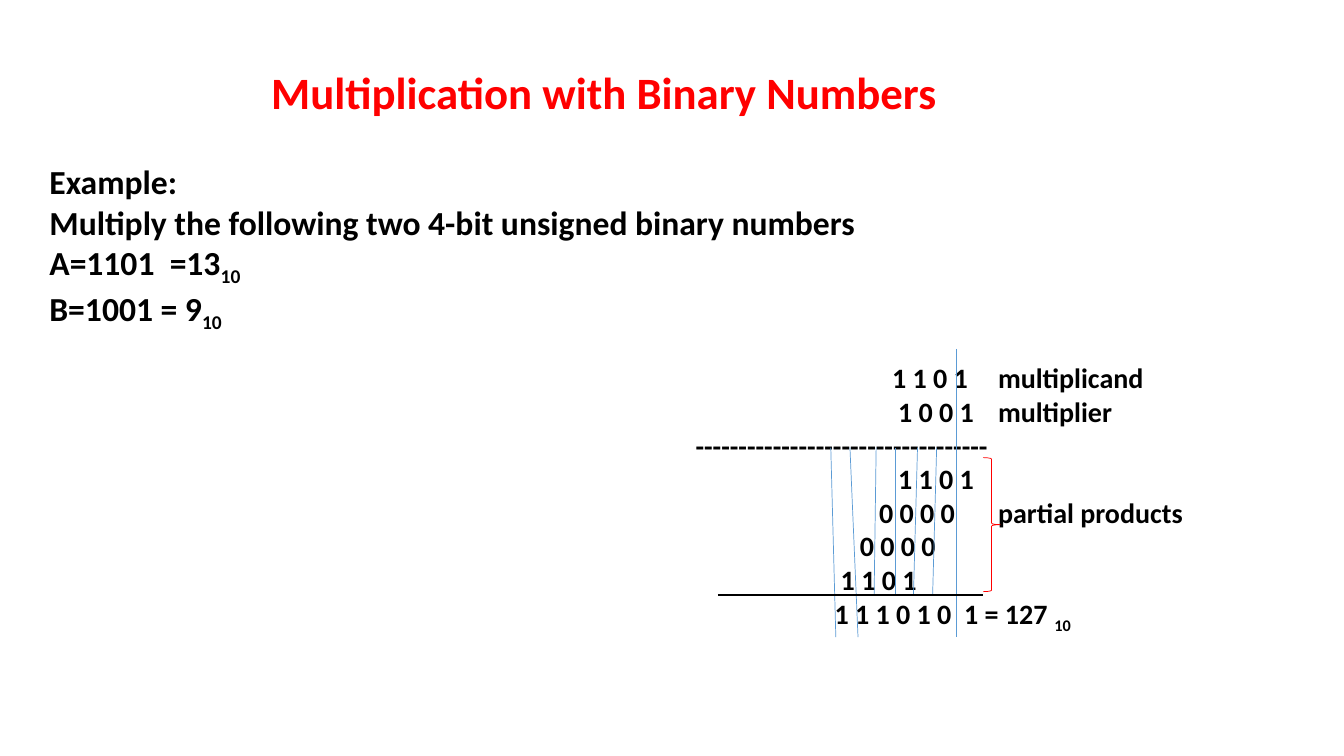
from lxml.etree import SubElement
from pptx import Presentation
from pptx.dml.color import RGBColor
from pptx.enum.shapes import MSO_CONNECTOR as CONN, MSO_SHAPE as SHAPE
from pptx.enum.text import MSO_ANCHOR as ANCHOR, MSO_AUTO_SIZE as AUTO, PP_ALIGN as ALIGN
from pptx.oxml.ns import qn
from pptx.util import Inches, Pt

RED = RGBColor(0xFF, 0x00, 0x00)
BLACK = RGBColor(0x00, 0x00, 0x00)
BLUE = RGBColor(0x5B, 0x9B, 0xD5)

# Start of each row inside the text box, its text, its subscript
WORKING = [
    (1.95, "1 1 0 1\tmultiplicand", ""),
    (2.01, "1 0 0 1\tmultiplier", ""),
    (0, "-" * 34, ""),
    (2.01, "1 1 0 1", ""),
    (1.82, "0 0 0 0\tpartial products", ""),
    (1.63, "0 0 0 0", ""),
    (1.44, "1 1 0 1", ""),
    (1.38, "1 1 1 0 1 0  1 = 127 ", "10"),
]
LABEL_TABS = {"multiplicand": 2.95, "multiplier": 2.95, "partial products": 3.07}
# Top x, bottom x and bottom y of each column guide, from the box corner
GUIDES = [(1.44, 1.49, 2.79), (1.63, 1.71, 2.79), (1.89, 1.87, 2.37),
          (2.08, 2.08, 2.37), (2.3, 2.26, 2.37), (2.49, 2.45, 2.37)]


def place(sp, left, top, width, height):
    sp.left, sp.top = Inches(left), Inches(top)
    sp.width, sp.height = Inches(width), Inches(height)


def setup_frame(tf):
    tf.word_wrap = True
    tf.auto_size = AUTO.NONE
    tf.vertical_anchor = ANCHOR.TOP


def style(p, size, color=BLACK, indent=0):
    """Bold, left-aligned text without bullet; indent moves the first line."""
    p.alignment = ALIGN.LEFT
    p.space_before = Pt(0)
    f = p.font
    f.name, f.size, f.bold = "Calibri", Pt(size), True
    f.color.rgb = color
    pPr = p._p.get_or_add_pPr()
    pPr.set("marL", "0")
    pPr.set("indent", str(Inches(indent)))
    pPr.insert_element_before(pPr.makeelement(qn("a:buNone")), "a:tabLst", "a:defRPr")


def add_tab(p, pos):
    pPr = p._p.get_or_add_pPr()
    tabs = pPr.makeelement(qn("a:tabLst"))
    SubElement(tabs, qn("a:tab"), pos=str(Inches(pos)), algn="l")
    pPr.insert_element_before(tabs, "a:defRPr")


def add_subscript(p, text):
    r = p.add_run()
    r.text = text
    r._r.get_or_add_rPr().set("baseline", "-25000")


def add_line(slide, x1, y1, x2, y2, color=BLUE, width=0.5):
    line = slide.shapes.add_connector(CONN.STRAIGHT, *map(Inches, (x1, y1, x2, y2)))
    line.line.color.rgb = color
    line.line.width = Pt(width)
    SubElement(line._element.spPr, qn("a:effectLst"))


def add_title(slide, left, top, width, height):
    title = slide.shapes.title
    place(title, left, top, width, height)
    setup_frame(title.text_frame)
    p = title.text_frame.paragraphs[0]
    p.text = "Multiplication with Binary Numbers"
    style(p, 32, RED)


def add_example(slide, left, top, width, height):
    body = slide.placeholders[1]
    place(body, left, top, width, height)
    tf = body.text_frame
    setup_frame(tf)
    p = tf.paragraphs[0]
    p.text = "Example:\vMultiply the following two 4-bit unsigned binary numbers"
    style(p, 24)
    for factor in ("A=1101  =13", "B=1001 = 9"):
        p = tf.add_paragraph()
        p.text = factor
        add_subscript(p, "10")
        style(p, 24)


def add_working(slide, left, top, width, height):
    """Long multiplication with column guides, sum line and brace."""
    box = slide.shapes.add_textbox(*map(Inches, (left, top, width, height)))
    tf = box.text_frame
    setup_frame(tf)
    for i, (indent, text, subscript) in enumerate(WORKING):
        p = tf.add_paragraph() if i else tf.paragraphs[0]
        p.text = text
        style(p, 20, indent=indent)
        label = text.partition("\t")[2]
        if label:
            add_tab(p, LABEL_TABS[label])
        if subscript:
            add_subscript(p, subscript)

    for x1, x2, bottom in GUIDES:
        add_line(slide, left + x1, top + 0.91, left + x2, top + bottom)
    add_line(slide, left + 2.69, top - 0.07, left + 2.69, top + height)
    add_line(slide, left + 0.32, top + 2.37, left + 2.95, top + 2.37, BLACK, 1.5)

    brace = slide.shapes.add_shape(
        SHAPE.RIGHT_BRACE, *map(Inches, (left + 2.95, top + 1.01, 0.17, 1.33)))
    brace.shadow.inherit = False
    brace.fill.background()
    brace.line.color.rgb = RED
    brace.line.width = Pt(0.5)


def main():
    prs = Presentation()
    prs.slide_width, prs.slide_height = Inches(13.33), Inches(7.5)
    slide = prs.slides.add_slide(prs.slide_layouts[1])
    add_title(slide, 2.59, 0.59, 7.16, 0.64)
    add_example(slide, 0.39, 1.55, 8.4, 1.72)
    add_working(slide, 6.8, 3.53, 5.55, 2.79)
    prs.save("out.pptx")


if __name__ == "__main__":
    main()
